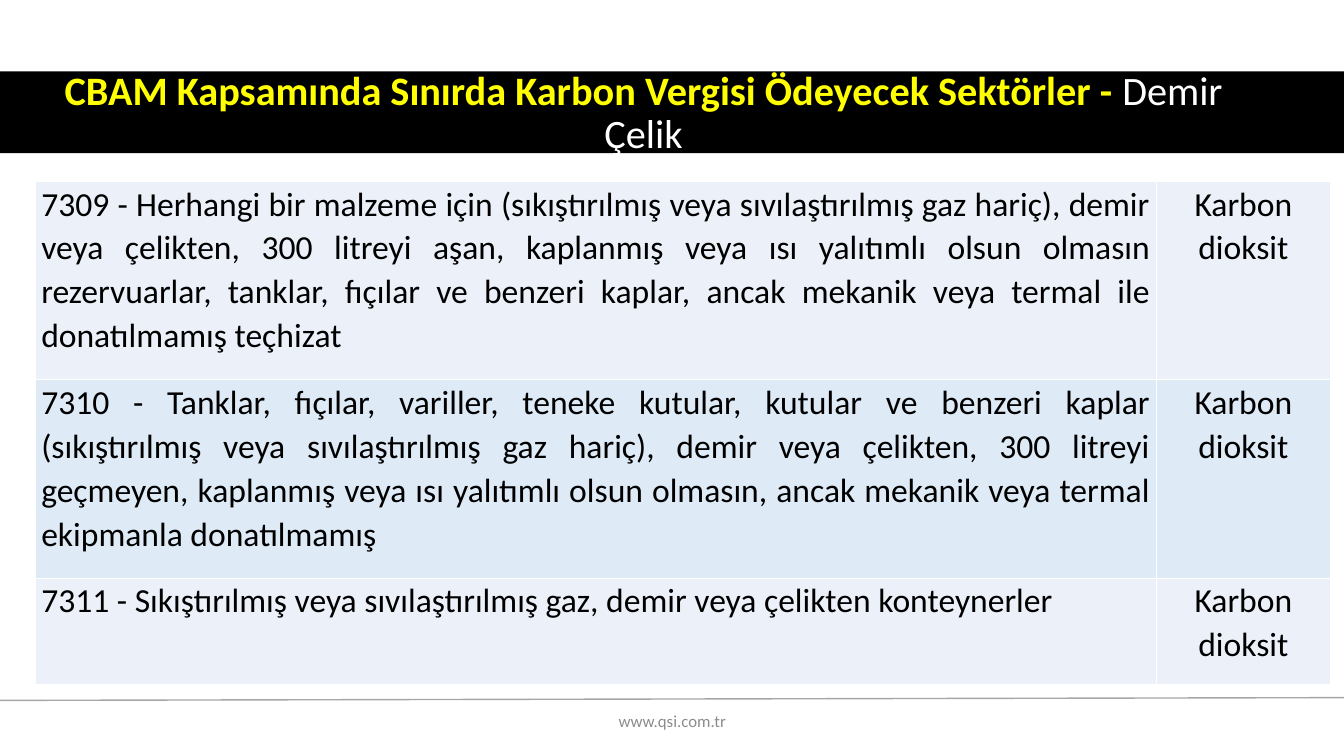
from lxml import etree
from pptx import Presentation
from pptx.dml.color import RGBColor
from pptx.enum.shapes import MSO_CONNECTOR, MSO_SHAPE
from pptx.enum.text import MSO_ANCHOR, MSO_AUTO_SIZE, PP_ALIGN
from pptx.oxml.ns import qn
from pptx.util import Cm, Pt

BLACK = RGBColor(0x00, 0x00, 0x00)
WHITE = RGBColor(0xFF, 0xFF, 0xFF)
YELLOW = RGBColor(0xFF, 0xFF, 0x00)
GREY = RGBColor(0x8C, 0x8C, 0x8C)
RULE = RGBColor(0xA6, 0xA6, 0xA6)
PALE = RGBColor(0xEC, 0xF1, 0xF9)
BLUE = RGBColor(0xDE, 0xEA, 0xF6)
CENTER, JUSTIFY = PP_ALIGN.CENTER, PP_ALIGN.JUSTIFY
MIDDLE, TOP = MSO_ANCHOR.MIDDLE, MSO_ANCHOR.TOP


def write(para, text, size=24, color=BLACK, bold=False, align=CENTER,
          line=1.0, after=0):
    para.alignment = align
    para.line_spacing = line
    para.space_after = Pt(after)
    run = para.add_run()
    run.text = text
    run.font.name = "Calibri"
    run.font.size = Pt(size)
    run.font.bold = bold
    run.font.color.rgb = color


deck = Presentation()
deck.slide_width, deck.slide_height = Cm(33.87), Cm(19.05)
slide = deck.slides.add_slide(deck.slide_layouts[5])
shapes = slide.shapes

# Footer rule
rule = shapes.add_connector(MSO_CONNECTOR.STRAIGHT, Cm(0), Cm(17.65),
                            Cm(33.87), Cm(17.58))
rule.line.color.rgb = RULE
rule.line.width = Pt(1)
etree.SubElement(rule.element.spPr, qn("a:effectLst"))

# Title on a black bar
bar = shapes.add_shape(MSO_SHAPE.RECTANGLE, Cm(0), Cm(1.8), Cm(33.87), Cm(2.06))
bar.shadow.inherit = False
bar.fill.solid()
bar.fill.fore_color.rgb = BLACK
bar.line.fill.background()

title = shapes.title
bar.element.addnext(title.element)
title.left, title.top, title.width, title.height = Cm(0.89), Cm(1.88), Cm(30.66), Cm(1.98)
frame = title.text_frame
frame.auto_size = MSO_AUTO_SIZE.NONE
frame.vertical_anchor = MIDDLE
head = frame.paragraphs[0]
write(head, "CBAM Kapsamında Sınırda Karbon Vergisi Ödeyecek Sektörler - ",
      size=28.8, color=YELLOW, bold=True, line=0.9)
write(head, "Demir Çelik", size=28.8, color=WHITE, line=0.9)

# Footer address
foot = shapes.add_textbox(Cm(11.23), Cm(17.65), Cm(11.43), Cm(1.02)).text_frame
foot.word_wrap = True
foot.vertical_anchor = MIDDLE
write(foot.paragraphs[0], "www.qsi.com.tr", size=12, color=GREY, after=6)

# Table of goods and gases
goods = [
    ("7309 - Herhangi bir malzeme için (sıkıştırılmış veya sıvılaştırılmış gaz "
     "hariç), demir veya çelikten, 300 litreyi aşan, kaplanmış veya ısı yalıtımlı "
     "olsun olmasın rezervuarlar, tanklar, fıçılar ve benzeri kaplar, ancak "
     "mekanik veya termal ile donatılmamış teçhizat", 5.0, PALE),
    ("7310 - Tanklar, fıçılar, variller, teneke kutular, kutular ve benzeri kaplar "
     "(sıkıştırılmış veya sıvılaştırılmış gaz hariç), demir veya çelikten, 300 "
     "litreyi geçmeyen, kaplanmış veya ısı yalıtımlı olsun olmasın, ancak mekanik "
     "veya termal ekipmanla donatılmamış", 5.0, BLUE),
    ("7311 - Sıkıştırılmış veya sıvılaştırılmış gaz, demir veya çelikten "
     "konteynerler", 2.67, PALE),
]
table = shapes.add_table(len(goods), 2, Cm(0.89), Cm(4.57), Cm(32.64), Cm(12.67)).table
table.first_row = False
table.horz_banding = False
table.columns[0].width, table.columns[1].width = Cm(28.25), Cm(4.39)
for row, (good, height, fill) in zip(table.rows, goods):
    row.height = Cm(height)
    pairs = [(good, JUSTIFY), ("Karbon dioksit", CENTER)]
    for cell, (text, align) in zip(row.cells, pairs):
        cell.fill.solid()
        cell.fill.fore_color.rgb = fill
        cell.margin_left = cell.margin_right = Cm(0.15)
        cell.margin_top, cell.margin_bottom = Cm(0), Cm(0.2)
        cell.vertical_anchor = TOP
        write(cell.text_frame.paragraphs[0], text, align=align, line=1.07, after=8)

deck.save("out.pptx")
